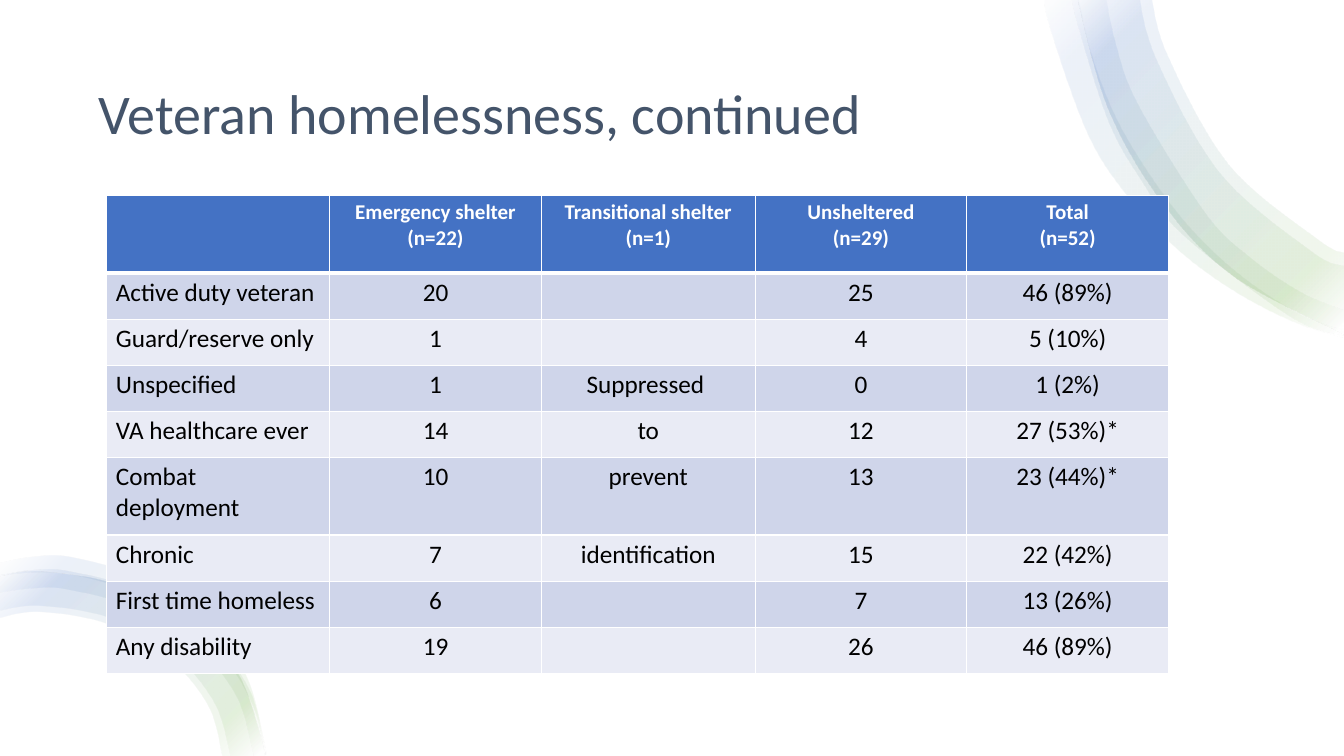
from lxml import etree
from pptx import Presentation
from pptx.dml.color import RGBColor
from pptx.enum import shapes, text
from pptx.oxml import ns
from pptx.util import Inches, Pt

WHITE = RGBColor(0xFF, 0xFF, 0xFF)
BLACK = RGBColor(0, 0, 0)
SLATE = RGBColor(0x44, 0x54, 0x6A)
BLUE = RGBColor(0x44, 0x72, 0xC4)
GREEN = RGBColor(0x70, 0xAD, 0x47)
BAND_DARK = RGBColor(0xCF, 0xD5, 0xEA)
BAND_LIGHT = RGBColor(0xE9, 0xEB, 0xF5)

# Content
TITLE = "Veteran homelessness, continued"
ROWS = [
    ("", "Emergency shelter\n(n=22)", "Transitional shelter\n(n=1)",
     "Unsheltered\n(n=29)", "Total\n(n=52)"),
    ("Active duty veteran", "20", "", "25", "46 (89%)"),
    ("Guard/reserve only", "1", "", "4", "5 (10%)"),
    ("Unspecified", "1", "Suppressed ", "0", "1 (2%)"),
    ("VA healthcare ever", "14", "to", "12", "27 (53%)*"),
    ("Combat deployment", "10", "prevent", "13", "23 (44%)*"),
    ("Chronic", "7", "identification", "15", "22 (42%)"),
    ("First time homeless", "6", "", "7", "13 (26%)"),
    ("Any disability", "19", "", "26", "46 (89%)"),
]
COLUMN_WIDTHS = (2.21, 2.1, 2.12, 2.1, 2.0)
TABLE_HEIGHT, TALL_ROWS, TALL = 4.74, (0, 5), 0.77
SHORT = (TABLE_HEIGHT - TALL * len(TALL_ROWS)) / (len(ROWS) - len(TALL_ROWS))

TITLE_FONT = {"name": "Calibri", "size": Pt(40), "bold": False}
HEADER_FONT = {"name": "Calibri", "size": Pt(15), "bold": True}
BODY_FONT = {"name": "Calibri", "size": Pt(18), "bold": False}
CELL_FORMAT = {"margin_left": Inches(0.09), "margin_right": Inches(0.09),
               "margin_top": Inches(0.04), "margin_bottom": Inches(0.04)}

# Ribbons: each is an outer edge and an inner edge, curved through these points
TOP_EDGE = [(13.33, 3.32), (12.23, 2.74), (11.52, 2.0), (10.99, 1.07), (10.67, -0.09)]
BOTTOM_EDGE = [(2.63, 7.5), (2.36, 6.69), (1.85, 6.16), (1.17, 5.8), (0.4, 5.67),
               (0, 5.72)]
TOP_RIBBONS = [
    ([(13.33, 3.35), (12.82, 3.19), (12.21, 2.87), (11.65, 2.45),
      (11.16, 1.92), (10.78, 1.31), (10.41, 0.26), (10.36, -0.09)],
     [(10.68, -0.09), (10.82, 0.52), (11.06, 1.15), (11.4, 1.73),
      (11.81, 2.27), (12.3, 2.73), (12.86, 3.1), (13.33, 3.28)]),
    (TOP_EDGE,
     [(11.41, -0.09), (11.58, 0.55), (12.19, 1.64), (13.07, 2.38), (13.33, 2.51)]),
    ([(13.33, 3.33), (12.79, 3.14), (11.73, 2.33), (11.32, 1.79),
      (10.99, 1.19), (10.68, 0.2), (10.63, -0.09)],
     [(10.96, -0.09), (11.07, 0.44), (11.29, 1.04), (11.95, 2.11), (12.39, 2.55),
      (12.9, 2.9), (13.33, 3.08)]),
    (TOP_EDGE,
     [(11.29, -0.09), (11.47, 0.59), (12.1, 1.72), (13.01, 2.5), (13.33, 2.64)]),
]
BOTTOM_RIBBONS = [
    (BOTTOM_EDGE,
     [(0, 6.13), (0.4, 6.07), (1.07, 6.19), (1.66, 6.52), (2.06, 7), (2.2, 7.5)]),
    (BOTTOM_EDGE,
     [(0, 6.06), (0.4, 6.01), (1.09, 6.13), (1.7, 6.47), (2.12, 6.97), (2.28, 7.5)]),
    ([(2.63, 7.5), (2.47, 6.85), (2.03, 6.27), (1.42, 5.87),
      (0.69, 5.67), (0.31, 5.66), (0, 5.71)],
     [(0, 5.88), (0.33, 5.84), (0.67, 5.85), (1.34, 6.03), (1.92, 6.39),
      (2.34, 6.91), (2.51, 7.5)]),
    ([(2.64, 7.5), (2.5, 6.87), (2.33, 6.53), (1.96, 6.09), (1.48, 5.75),
      (0.71, 5.53), (0.31, 5.53), (0, 5.59)],
     [(0, 5.72), (0.32, 5.68), (0.69, 5.7), (1.22, 5.84), (1.71, 6.09),
      (2.25, 6.58), (2.52, 7.05), (2.62, 7.5)]),
]
RIBBON_STOPS = [(2, WHITE), (16, GREEN), (85, BLUE), (100, WHITE)]
RIBBON_OPACITY = 10
RIBBON_ANGLE = 135


def apply(target, values):
    for name, value in values.items():
        setattr(target, name, value)


def add_child(parent, tag, **attributes):
    return etree.SubElement(parent, ns.qn(tag), attributes)


def curve_edge(knots, segments):
    """Turn the straight segments between the knots into smooth curves."""
    padded = [knots[0], *knots, knots[-1]]
    for a, b, c, d, segment in zip(padded, padded[1:], padded[2:], padded[3:], segments):
        segment.tag = ns.qn("a:cubicBezTo")
        before = [q + (r - p) / 6 for p, q, r in zip(a, b, c)]
        after = [q - (r - p) / 6 for p, q, r in zip(b, c, d)]
        for index, (x, y) in enumerate((before, after)):
            point = etree.Element(ns.qn("a:pt"), x=str(round(x)), y=str(round(y)))
            segment.insert(index, point)


def add_ribbons(slide, ribbons):
    group = slide.shapes.add_group_shape()
    for outer, inner in ribbons:
        outline = [(Inches(x), Inches(y)) for x, y in outer + inner]
        builder = group.shapes.build_freeform(*outline[0])
        builder.add_line_segments(outline[1:], close=True)
        ribbon = builder.convert_to_shape()
        properties = ribbon._element.spPr
        knots = [(int(point.get("x")), int(point.get("y")))
                 for point in properties.iter(ns.qn("a:pt"))]
        segments = list(properties.iter(ns.qn("a:lnTo")))
        split = len(outer)
        curve_edge(knots[:split], segments[:split - 1])
        curve_edge(knots[split:split + len(inner)], segments[split:])
        ribbon.shadow.inherit = False
        ribbon.line.fill.background()
        ribbon.fill.gradient()
        ribbon.fill.gradient_angle = RIBBON_ANGLE
        stops = properties.find(".//" + ns.qn("a:gsLst"))
        for stop in list(stops):
            stops.remove(stop)
        for position, color in RIBBON_STOPS:
            stop = add_child(stops, "a:gs", pos=str(position * 1000))
            tint = add_child(stop, "a:srgbClr", val=str(color))
            add_child(tint, "a:alpha", val=str(RIBBON_OPACITY * 1000))


def set_borders(cell, widths):
    properties = cell._tc.get_or_add_tcPr()
    for side, width in widths.items():
        line = add_child(properties, "a:ln" + side, w=str(Pt(width)))
        add_child(add_child(line, "a:solidFill"), "a:srgbClr", val=str(WHITE))


def add_veteran_table(slide):
    table = slide.shapes.add_table(
        len(ROWS), len(COLUMN_WIDTHS), Inches(1.06), Inches(1.94),
        Inches(sum(COLUMN_WIDTHS)), Inches(TABLE_HEIGHT)).table
    for column, width in zip(table.columns, COLUMN_WIDTHS):
        column.width = Inches(width)
    for r, row in enumerate(ROWS):
        table.rows[r].height = Inches(TALL if r in TALL_ROWS else SHORT)
        fill = BLUE if r == 0 else BAND_DARK if r % 2 else BAND_LIGHT
        for c, wording in enumerate(row):
            cell = table.cell(r, c)
            apply(cell, CELL_FORMAT)
            set_borders(cell, {"L": 1, "R": 1, "T": 3 if r == 1 else 1,
                               "B": 3 if r == 0 else 1})
            cell.fill.solid()
            cell.fill.fore_color.rgb = fill
            cell.text = wording
            for paragraph in cell.text_frame.paragraphs:
                paragraph.alignment = text.PP_ALIGN.CENTER if c else text.PP_ALIGN.LEFT
                apply(paragraph.font, BODY_FONT if r else HEADER_FONT)
                paragraph.font.color.rgb = BLACK if r else WHITE


def main():
    presentation = Presentation()
    presentation.slide_width, presentation.slide_height = Inches(13.33), Inches(7.5)
    slide = presentation.slides.add_slide(presentation.slide_layouts[5])

    # White backdrop, behind the title
    backdrop = slide.shapes.add_shape(
        shapes.MSO_SHAPE.RECTANGLE, 0, 0, Inches(13.33), Inches(7.5))
    backdrop.shadow.inherit = False
    backdrop.fill.solid()
    backdrop.fill.fore_color.rgb = WHITE
    backdrop.line.fill.background()
    slide.shapes._spTree.insert(2, backdrop._element)

    # Title
    title = slide.shapes.title
    apply(title, {"left": Inches(0.88), "top": Inches(0.5),
                  "width": Inches(11.57), "height": Inches(1.3)})
    title.text_frame.text = TITLE
    title.text_frame.vertical_anchor = text.MSO_ANCHOR.MIDDLE
    paragraph = title.text_frame.paragraphs[0]
    apply(paragraph, {"alignment": text.PP_ALIGN.LEFT, "line_spacing": 0.9})
    apply(paragraph.font, TITLE_FONT)
    paragraph.font.color.rgb = SLATE

    # Corner ribbons, then the table over them
    for ribbons in (TOP_RIBBONS, BOTTOM_RIBBONS):
        add_ribbons(slide, ribbons)
    add_veteran_table(slide)
    presentation.save("out.pptx")


if __name__ == "__main__":
    main()
